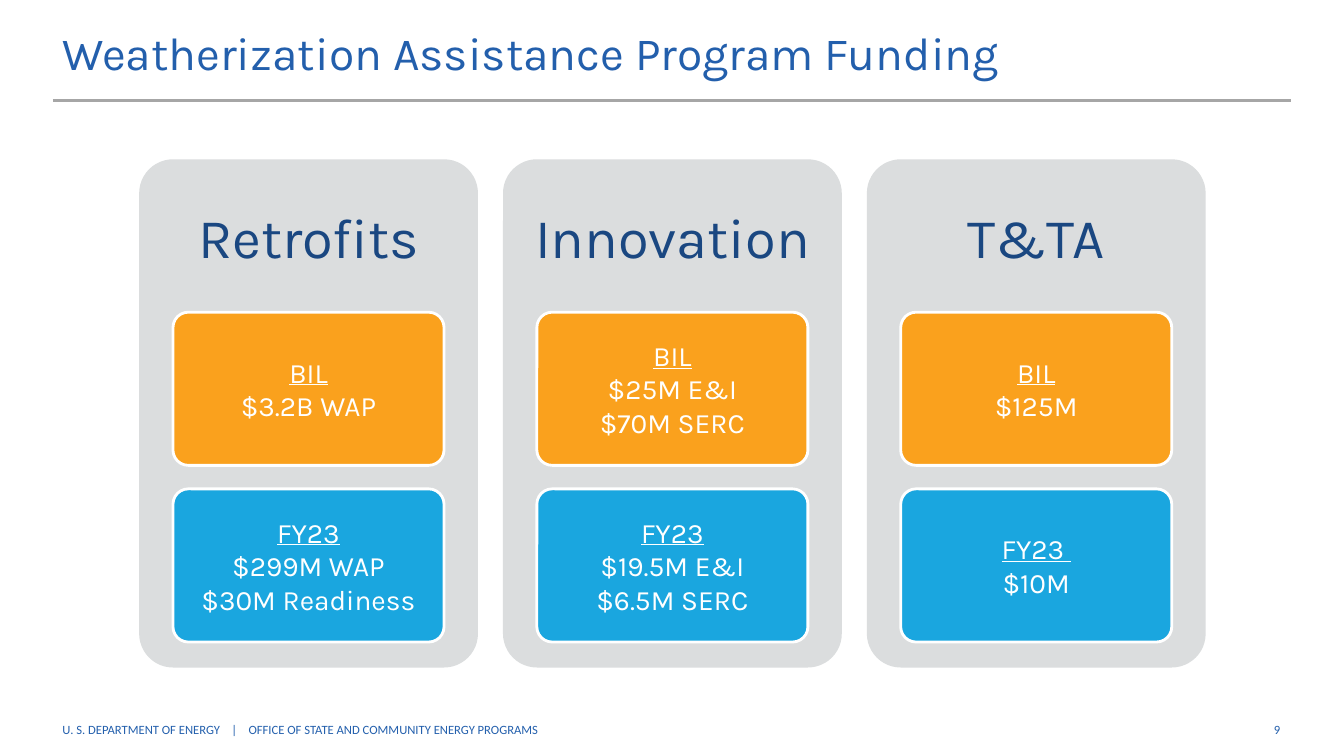
"""Build the Weatherization Assistance Program funding slide."""
from dataclasses import dataclass
from typing import NamedTuple

from lxml import etree
from pptx import Presentation
from pptx.dml.color import RGBColor
from pptx.enum import shapes, text
from pptx.oxml import ns
from pptx.util import Pt


@dataclass(frozen=True)
class Theme:
    """Colours, fonts and type sizes of the slide."""
    title: str = "235FAC"
    footer: str = "2460AD"
    heading: str = "1A4781"
    rule: str = "A6A6A6"
    panel: str = "DBDDDE"
    bil: str = "FAA11D"
    fy23: str = "1AA6DF"
    white: str = "FFFFFF"
    display_font: str = "Karla"
    footer_font: str = "Calibri"
    title_size: float = 33
    heading_size: float = 40
    card_size: float = 20
    footer_size: float = 9


class Box(NamedTuple):
    """Left, top, width and height in points."""
    left: float
    top: float
    width: float
    height: float


class Style(NamedTuple):
    """Look of a run of text."""
    font: str
    size: float
    color: str
    align: text.PP_ALIGN = text.PP_ALIGN.LEFT


class Program(NamedTuple):
    """A funding column with the lines of its two cards."""
    name: str
    bil: list[str]
    fy23: list[str]


THEME = Theme()
CENTER = text.PP_ALIGN.CENTER
TITLE = Style(THEME.display_font, THEME.title_size, THEME.title)
HEADING = Style(THEME.display_font, THEME.heading_size, THEME.heading, CENTER)
CARD = Style(THEME.display_font, THEME.card_size, THEME.white, CENTER)
FOOTER = Style(THEME.footer_font, THEME.footer_size, THEME.footer)
NUMBER = Style(THEME.footer_font, THEME.footer_size, THEME.title, text.PP_ALIGN.RIGHT)

PANEL = Box(99.4, 113.8, 242, 363)
PANEL_PITCH = 259.9
HEADING_HEIGHT = 109
CARD_INSET = 24.2
CARD_TOP, CARD_PITCH, CARD_HEIGHT = 223, 126.2, 109.4

PROGRAMS = [
    Program("Retrofits", ["BIL", "$3.2B WAP"],
            ["FY23", "$299M WAP", "$30M Readiness"]),
    Program("Innovation", ["BIL", "$25M E&I", "$70M SERC"],
            ["FY23", "$19.5M E&I", "$6.5M SERC"]),
    Program("T&TA", ["BIL", "$125M"], ["FY23 ", "$10M"]),
]


def write(sp, lines: list[str], style: Style, insets: tuple[float, float] = (7.2, 3.6),
          underline_first: bool = False) -> None:
    """Fill a shape with lines of text in one paragraph."""
    side, edge = (Pt(inset) for inset in insets)
    tf = sp.text_frame
    frame = {"word_wrap": True, "vertical_anchor": text.MSO_ANCHOR.MIDDLE,
             "margin_left": side, "margin_right": side,
             "margin_top": edge, "margin_bottom": edge}
    for name, value in frame.items():
        setattr(tf, name, value)
    p = tf.paragraphs[0]
    p.alignment = style.align
    for i, line in enumerate(lines):
        if i:
            p.add_line_break()
        r = p.add_run()
        r.text = line
        font = {"name": style.font, "size": Pt(style.size),
                "underline": underline_first and i == 0}
        for name, value in font.items():
            setattr(r.font, name, value)
        r.font.color.rgb = RGBColor.from_string(style.color)


def add_text(s, box: Box, line: str, style: Style,
             insets: tuple[float, float] = (7.2, 3.6)) -> None:
    """Add a text box holding one line."""
    write(s.shapes.add_textbox(*map(Pt, box)), [line], style, insets)


def add_block(s, kind: shapes.MSO_SHAPE, box: Box, fill: str, outline: str | None = None):
    """Add a filled shape, outlined on request."""
    sp = s.shapes.add_shape(kind, *map(Pt, box))
    sp.shadow.inherit = False
    sp.fill.solid()
    sp.fill.fore_color.rgb = RGBColor.from_string(fill)
    if kind == shapes.MSO_SHAPE.ROUNDED_RECTANGLE:
        sp.adjustments[0] = 0.1
    if outline:
        sp.line.color.rgb = RGBColor.from_string(outline)
        sp.line.width = Pt(2)
    else:
        sp.line.fill.background()
    return sp


def add_rule(s) -> None:
    """Draw the line beneath the title."""
    rule = s.shapes.add_connector(shapes.MSO_CONNECTOR.STRAIGHT,
                                  Pt(37.8), Pt(72), Pt(922), Pt(72))
    rule.line.color.rgb = RGBColor.from_string(THEME.rule)
    rule.line.width = Pt(2)
    etree.SubElement(rule._element.spPr, ns.qn("a:effectLst"))


def add_program(s, index: int, program: Program) -> None:
    """Draw one funding column."""
    rounded = shapes.MSO_SHAPE.ROUNDED_RECTANGLE
    panel = PANEL._replace(left=PANEL.left + index * PANEL_PITCH)
    add_block(s, rounded, panel, THEME.panel)
    add_text(s, panel._replace(height=HEADING_HEIGHT), program.name, HEADING, (12, 12))
    cards = [(program.bil, THEME.bil), (program.fy23, THEME.fy23)]
    for row, (lines, fill) in enumerate(cards):
        box = Box(panel.left + CARD_INSET, CARD_TOP + row * CARD_PITCH,
                  panel.width - 2 * CARD_INSET, CARD_HEIGHT)
        sp = add_block(s, rounded, box, fill, THEME.white)
        write(sp, lines, CARD, (4, 3), underline_first=True)


def main() -> None:
    """Build and save the slide."""
    prs = Presentation()
    prs.slide_width, prs.slide_height = Pt(960), Pt(540)
    s = prs.slides.add_slide(prs.slide_layouts[6])
    add_rule(s)
    number = add_block(s, shapes.MSO_SHAPE.RECTANGLE,
                       Box(762.5, 502.6, 159.1, 37.4), THEME.white)
    write(number, ["9"], NUMBER)
    add_text(s, Box(37.5, 502.6, 846, 37.4),
             "U. S. DEPARTMENT OF ENERGY    |    "
             "OFFICE OF STATE AND COMMUNITY ENERGY PROGRAMS", FOOTER)
    add_text(s, Box(37.5, 5, 916, 64), "Weatherization Assistance Program Funding", TITLE)
    for index, program in enumerate(PROGRAMS):
        add_program(s, index, program)
    prs.save("out.pptx")


if __name__ == "__main__":
    main()
